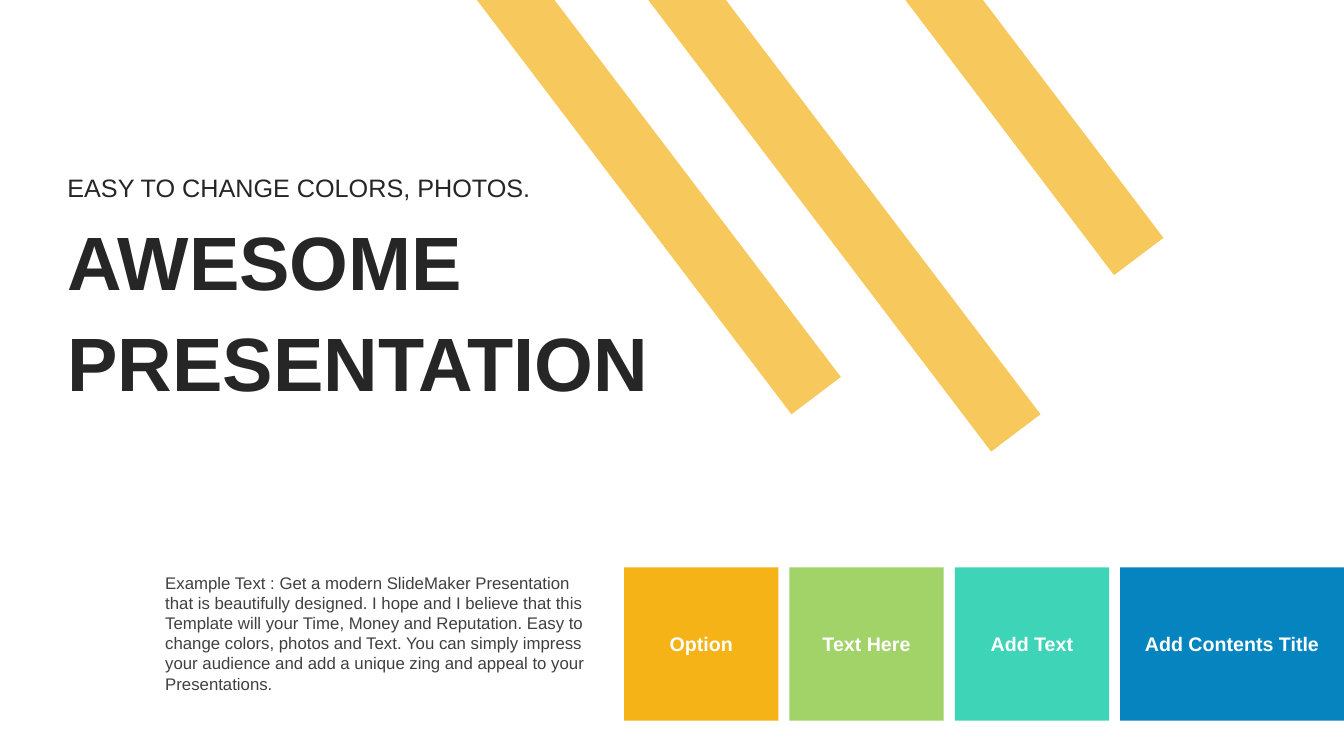
from lxml.etree import SubElement
from pptx import Presentation
from pptx.dml.color import RGBColor
from pptx.enum.shapes import MSO_SHAPE
from pptx.enum.text import MSO_ANCHOR, MSO_AUTO_SIZE, PP_ALIGN
from pptx.oxml.ns import qn
from pptx.util import Pt

PX = 9144  # EMU per px, 100 px to the inch
WIDE, HIGH = 1333, 750
FONT = "Arial"
INK, GREY, WHITE, GOLD = "262626", "404040", "FFFFFF", "F5B317"

BLURB = (
    "Example Text : Get a modern SlideMaker Presentation that is beautifully "
    "designed. I hope and I believe that this Template will your Time, Money "
    "and Reputation. Easy to change colors, photos and Text. You can simply "
    "impress your audience and add a unique zing and appeal to your "
    "Presentations."
)
# Left edge at the top of the slide, then the lowest point
BANDS = [(898, 1105, 273), (473, 785, 411), (643, 983, 448)]
CARDS = [("Option", GOLD), ("Text Here", "A2D368"),
         ("Add Text", "3ED4B7"), ("Add Contents Title", "0684BF")]


def paint(target, color):
    target.fill.solid()
    target.fill.fore_color.rgb = RGBColor.from_string(color)
    target.line.fill.background()
    target.shadow.inherit = False


def write(frame, text, size, color, bold=False):
    run = frame.paragraphs[0].add_run()
    run.text = text
    font = run.font
    font.name, font.size, font.bold = FONT, Pt(size), bold
    font.color.rgb = RGBColor.from_string(color)


def add_text(slide, box, text, size, color, bold=False, anchor=MSO_ANCHOR.TOP):
    frame = slide.shapes.add_textbox(*(n * PX for n in box)).text_frame
    frame.word_wrap = True
    frame.auto_size = MSO_AUTO_SIZE.SHAPE_TO_FIT_TEXT
    frame.vertical_anchor = anchor
    write(frame, text, size, color, bold)


def add_band(slide, left, tip, low):
    pen = slide.shapes.build_freeform(left, 0, scale=PX)
    pen.add_line_segments([(left + 77, 0), (tip + 49, low - 37), (tip, low)])
    band = pen.convert_to_shape()
    paint(band, GOLD)
    # 70 % opaque
    tint = band.fill._xPr.find(qn("a:solidFill"))[0]
    SubElement(tint, qn("a:alpha"), val="70000")


def add_card(slide, left, top, width, height, label, color):
    box = (n * PX for n in (left, top, width, height))
    card = slide.shapes.add_shape(MSO_SHAPE.RECTANGLE, *box)
    paint(card, color)
    frame = card.text_frame
    frame.word_wrap = True
    frame.vertical_anchor = MSO_ANCHOR.MIDDLE
    frame.paragraphs[0].alignment = PP_ALIGN.CENTER
    write(frame, label, 14, WHITE, True)


def main():
    deck = Presentation()
    deck.slide_width, deck.slide_height = WIDE * PX, HIGH * PX
    slide = deck.slides.add_slide(deck.slide_layouts[6])

    # Slanted bands
    for band in BANDS:
        add_band(slide, *band)

    # Title and subtitle
    for row, word in enumerate(("AWESOME", "PRESENTATION")):
        add_text(slide, (57, 208 + 100 * row, 646, 101), word, 54, INK,
                 True, MSO_ANCHOR.MIDDLE)
    add_text(slide, (57, 166, 646, 40), "EASY TO CHANGE COLORS, PHOTOS.",
             18, INK)

    # Description
    add_text(slide, (154, 563, 448, 131), BLURB, 12, GREY)

    # Row of cards, the last one running to the slide edge
    first, side, gap = 619, 153, 11
    for col, (label, color) in enumerate(CARDS):
        left = first + col * (side + gap)
        last = col == len(CARDS) - 1
        width = WIDE - left if last else side
        add_card(slide, left, 563, width, 152, label, color)

    deck.save("out.pptx")


if __name__ == "__main__":
    main()
